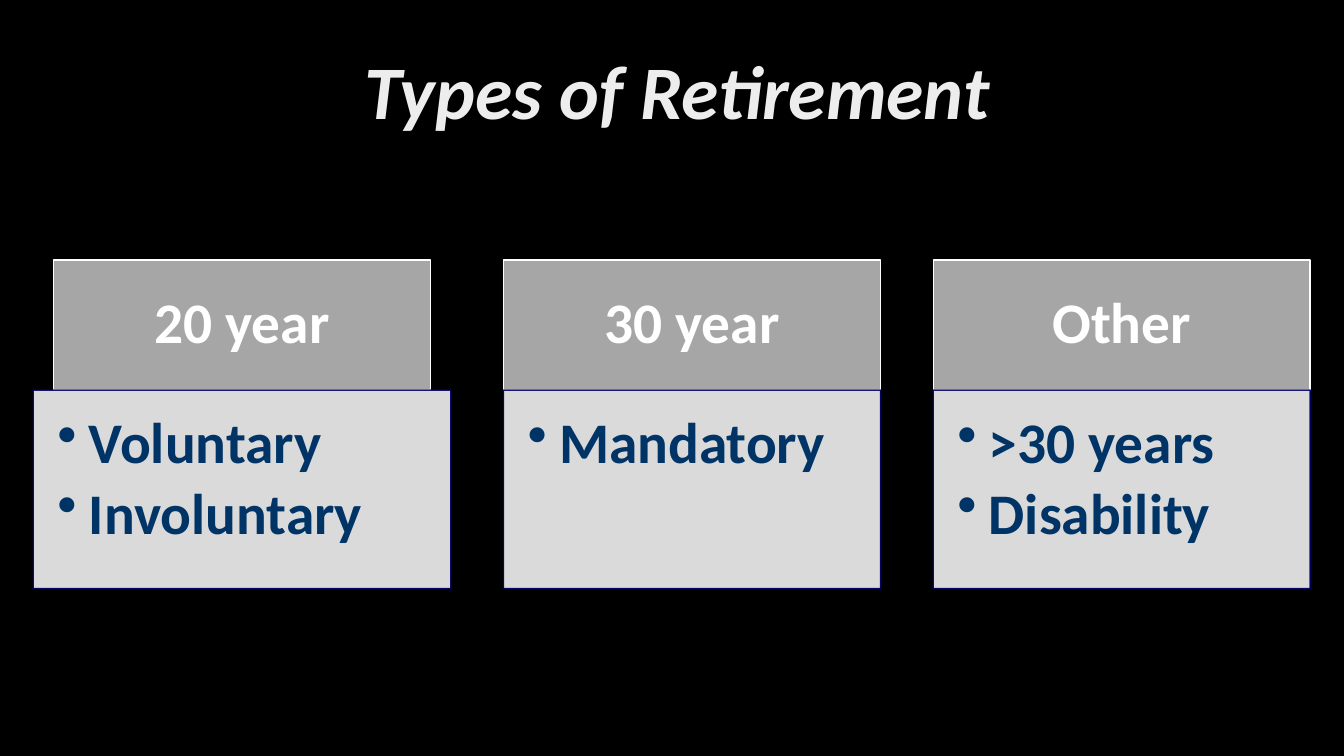
"""Build the slide that sorts retirement types into three columns."""
from lxml.etree import SubElement
from pptx import Presentation
from pptx.dml.color import RGBColor
from pptx.enum.shapes import MSO_SHAPE as Shape
from pptx.enum.text import MSO_ANCHOR as Anchor, PP_ALIGN as Align
from pptx.oxml.ns import qn
from pptx.util import Cm, Pt

COLOURS = {
    "background": "000000",
    "title": "EDEDED",
    "header": "A6A6A6",
    "white": "FFFFFF",
    "panel": "F2F2F2",
    "navy": "000066",
    "item": "003366",
}
COLUMNS = [
    ("20 year", ["Voluntary", "Involuntary"], 10.52),
    ("30 year", ["Mandatory"], 9.5),
    ("Other", [">30 years", "Disability"], 9.5),
]
LEFT, GAP = 0.84, 1.33
HEADER_TOP, HEADER_WIDTH, HEADER_HEIGHT = 6.55, 9.5, 3.28
PANEL_HEIGHT = 5


def add_box(left, top, width, height, fill, line, opacity, margins):
    box = page.shapes.add_shape(Shape.RECTANGLE, Cm(left), Cm(top), Cm(width), Cm(height))
    box.shadow.inherit = False
    box.fill.solid()
    box.fill.fore_color.rgb = RGBColor.from_string(COLOURS[fill])
    box.line.color.rgb = RGBColor.from_string(COLOURS[line])
    box.line.width = Pt(1)
    if opacity < 100:
        for colour in box._element.spPr.iter(qn("a:srgbClr")):
            SubElement(colour, qn("a:alpha"), val=str(opacity * 1000))
    frame = box.text_frame
    frame.word_wrap = True
    frame.margin_left, frame.margin_top, frame.margin_right, frame.margin_bottom = map(Cm, margins)
    return frame


def write(para, text, size, colour, align, after=0):
    para.alignment = align
    para.line_spacing = 0.9
    para.space_after = Pt(after)
    span = para.add_run()
    span.text = text
    span.font.name = "Calibri"
    span.font.size = Pt(size)
    span.font.bold = True
    span.font.color.rgb = RGBColor.from_string(COLOURS[colour])
    return span


deck = Presentation()
deck.slide_width, deck.slide_height = Cm(33.87), Cm(19.05)
page = deck.slides.add_slide(deck.slide_layouts[6])
page.background.fill.solid()
page.background.fill.fore_color.rgb = RGBColor.from_string(COLOURS["background"])

title = page.shapes.add_textbox(Cm(2.46), Cm(0.56), Cm(29.21), Cm(3.68)).text_frame
title.word_wrap = True
title.vertical_anchor = Anchor.MIDDLE
write(title.paragraphs[0], "Types of Retirement", 54, "title", Align.CENTER).font.italic = True

left = LEFT
for heading, items, width in COLUMNS:
    header_left = left + (width - HEADER_WIDTH) / 2
    header = add_box(header_left, HEADER_TOP, HEADER_WIDTH, HEADER_HEIGHT,
                     "header", "white", 100, (0.81, 0.46, 0.81, 0.46))
    header.vertical_anchor = Anchor.MIDDLE
    write(header.paragraphs[0], heading, 41, "white", Align.CENTER)

    panel = add_box(left, HEADER_TOP + HEADER_HEIGHT, width, PANEL_HEIGHT,
                    "panel", "navy", 90, (0.61, 0.61, 0.81, 0.91))
    panel.vertical_anchor = Anchor.TOP
    for index, item in enumerate(items):
        para = panel.add_paragraph() if index else panel.paragraphs[0]
        para.level = 1
        properties = para._p.get_or_add_pPr()
        properties.set("marL", str(Cm(0.79)))
        properties.set("indent", str(-Cm(0.79)))
        SubElement(properties, qn("a:buChar"), char="•")
        write(para, item, 41, "item", Align.LEFT, after=6)
    left += width + GAP

deck.save("out.pptx")
